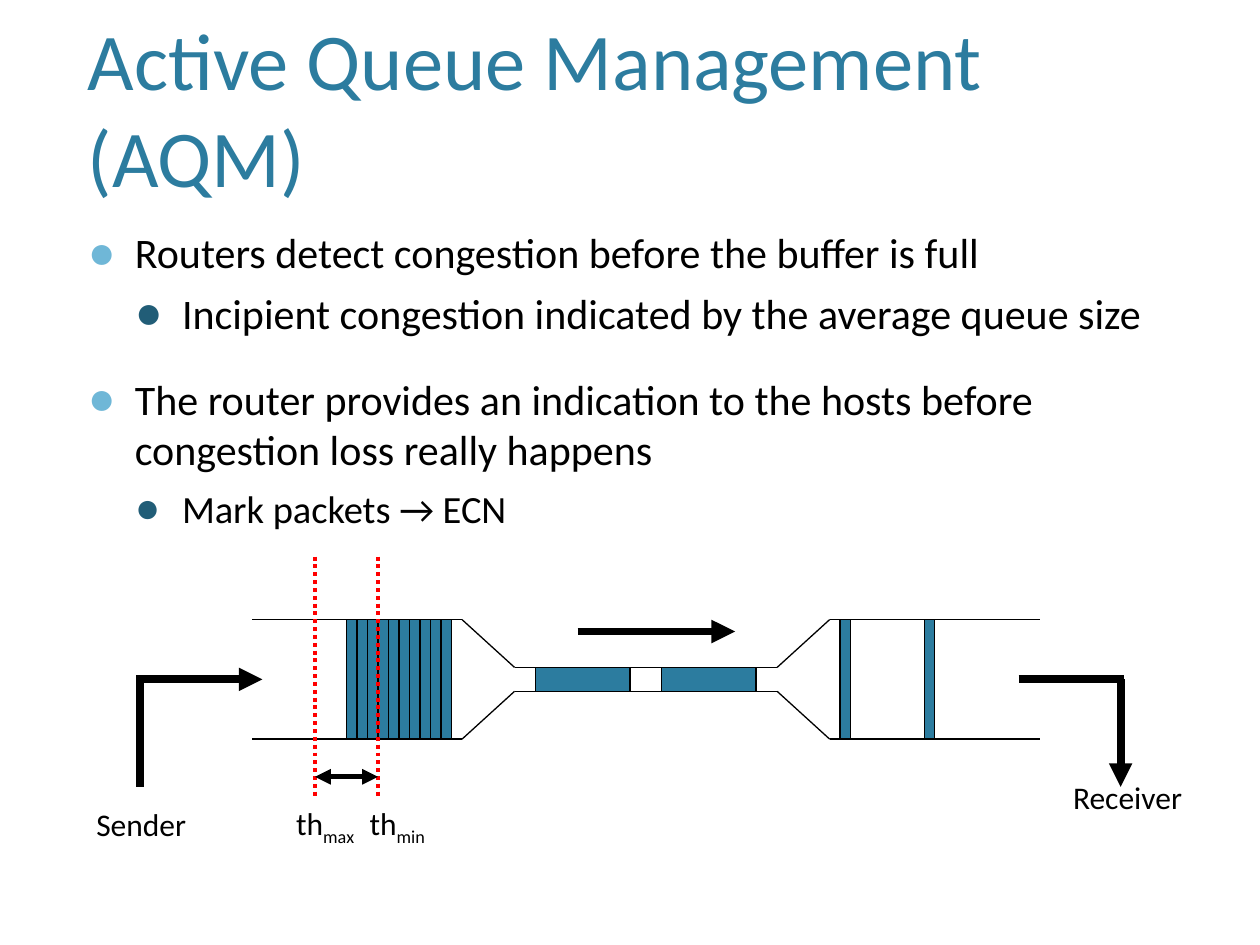
import pptx
import pptx.dml.color
import pptx.enum.dml
import pptx.enum.shapes
import pptx.enum.text
import pptx.oxml
import pptx.oxml.ns
import pptx.util
from pptx.util import Cm

RGBColor = pptx.dml.color.RGBColor
BLACK = RGBColor(0x00, 0x00, 0x00)
RED = RGBColor(0xFF, 0x00, 0x00)
TEAL = RGBColor(0x2C, 0x7C, 0x9F)
LIGHT_BLUE = RGBColor(0x6F, 0xB7, 0xD7)
DARK_BLUE = RGBColor(0x21, 0x5D, 0x77)

FONT = "Calibri"
DIAGRAM_COLUMNS = 75  # one column is the width of a queued packet


def append_element(parent, tag, **attributes):
    element = pptx.oxml.parse_xml(f"<a:{tag} {pptx.oxml.ns.nsdecls('a')}/>")
    for name, value in attributes.items():
        element.set(name, str(value))
    parent.append(element)


def add_text_box(slide, left, top, width, height,
                 anchor=pptx.enum.text.MSO_ANCHOR.TOP):
    frame = slide.shapes.add_textbox(
        Cm(left), Cm(top), Cm(width), Cm(height)).text_frame
    frame.word_wrap = True
    frame.vertical_anchor = anchor
    return frame


def add_text(paragraph, text, size=18, color=BLACK, baseline=None):
    run = paragraph.add_run()
    run.text = text
    run.font.name = FONT
    run.font.size = pptx.util.Pt(size)
    run.font.color.rgb = color
    if baseline is not None:
        run.font._element.set("baseline", str(baseline))


def set_bullet(paragraph, level, color):
    """Give the paragraph a coloured dot and the hanging indent of its level."""
    paragraph.level = level
    properties = paragraph._p.get_or_add_pPr()
    properties.set("marL", str(Cm(0.95 * (level + 1))))
    properties.set("indent", str(-Cm(0.95)))
    append_element(properties, "buClr")
    append_element(properties[-1], "srgbClr", val=color)
    append_element(properties, "buSzPct", val=110000)
    append_element(properties, "buFont", typeface="Arial")
    append_element(properties, "buChar", char="●")


def add_line(slide, start, end, width=0.75, color=BLACK, dash=None,
             head=False, tail=False):
    """Draw a line between two points; head and tail are arrowheads there."""
    line = slide.shapes.add_connector(
        pptx.enum.shapes.MSO_CONNECTOR.STRAIGHT,
        Cm(start[0]), Cm(start[1]), Cm(end[0]), Cm(end[1]))
    line.line.width = pptx.util.Pt(width)
    line.line.color.rgb = color
    if dash:
        line.line.dash_style = dash
    outline = line.line._get_or_add_ln()
    if head:
        append_element(outline, "headEnd", type="triangle")
    if tail:
        append_element(outline, "tailEnd", type="triangle")
    append_element(line._element.spPr, "effectLst")


def add_packet(slide, left, top, width, height):
    packet = slide.shapes.add_shape(
        pptx.enum.shapes.MSO_SHAPE.RECTANGLE,
        Cm(left), Cm(top), Cm(width), Cm(height))
    packet.shadow.inherit = False
    packet.fill.solid()
    packet.fill.fore_color.rgb = TEAL
    packet.line.color.rgb = BLACK
    packet.line.width = pptx.util.Pt(0.75)


def add_title(slide, left, top, width, height):
    frame = add_text_box(slide, left, top, width, height,
                         pptx.enum.text.MSO_ANCHOR.MIDDLE)
    add_text(frame.paragraphs[0], "Active Queue Management (AQM)",
             size=46, color=TEAL)


def add_bullets(slide, left, top, width, height):
    frame = add_text_box(slide, left, top, width, height)
    items = [
        (0, "Routers detect congestion before the buffer is full", 24),
        (1, "Incipient congestion indicated by the average queue size", 24),
        (0, "The router provides an indication to the hosts before "
            "congestion loss really happens", 24),
        (1, "Mark packets → ECN", 22),
    ]
    for index, (level, text, size) in enumerate(items):
        paragraph = frame.add_paragraph() if index else frame.paragraphs[0]
        if index:
            paragraph.space_before = pptx.util.Pt((20, 6)[level])
        set_bullet(paragraph, level, (LIGHT_BLUE, DARK_BLUE)[level])
        add_text(paragraph, text, size=size)


def add_network(slide, left, top, width, height):
    """Draw two buffers joined by a narrow link, with sender and receiver."""
    column = width / DIAGRAM_COLUMNS

    def point(columns, fraction):
        return left + columns * column, top + fraction * height

    upper_wall = [(0, 0), (20, 0), (25, 0.4), (50, 0.4), (55, 0), (75, 0)]
    lower_wall = [(x, 1 - y) for x, y in upper_wall]
    for wall in (upper_wall, lower_wall):
        for start, end in zip(wall, wall[1:]):
            add_line(slide, point(*start), point(*end))

    for position in [*range(9, 19), 56, 64]:
        add_packet(slide, *point(position, 0), column, height)
    for position in (27, 39):
        add_packet(slide, *point(position, 0.4), 9 * column, 0.2 * height)

    flow = [
        ((-11, 0.5), (1, 0.5), True),
        ((-10.7, 0.5), (-10.7, 1.4), False),
        ((31, 0.1), (46, 0.1), True),
        ((73, 0.5), (83, 0.5), False),
        ((82.7, 0.5), (82.7, 1.4), True),
    ]
    for start, end, arrow in flow:
        add_line(slide, point(*start), point(*end), width=4.5, tail=arrow)

    for label, position in (("Sender", (-16, 1.5)), ("Receiver", (77, 1.27))):
        frame = add_text_box(slide, *point(*position), 14 * column, 1)
        add_text(frame.paragraphs[0], label)


def add_thresholds(slide, left, top, width, height):
    """Mark the two queue thresholds at the left and right edge of the box."""
    bottom = top + height
    right = left + width
    for x in (right, left):
        add_line(slide, (x, top), (x, bottom), width=2.25, color=RED,
                 dash=pptx.enum.dml.MSO_LINE.ROUND_DOT)
    for name, x, label_width in (("min", right - 0.42, 2.1),
                                 ("max", left - 0.63, 1.9)):
        paragraph = add_text_box(slide, x, bottom, label_width, 1).paragraphs[0]
        add_text(paragraph, "th")
        add_text(paragraph, name, baseline=-25000)
    arrow_y = bottom - 0.42
    add_line(slide, (left, arrow_y), (right, arrow_y), width=3,
             head=True, tail=True)


def main():
    presentation = pptx.Presentation()
    presentation.slide_width = Cm(25.4)
    presentation.slide_height = Cm(19.05)
    slide = presentation.slides.add_slide(presentation.slide_layouts[6])
    add_title(slide, 1.52, 0.3, 22.35, 3.71)
    add_bullets(slide, 1.52, 4.45, 22.35, 12.06)
    add_network(slide, 5.08, 12.49, 15.88, 2.41)
    add_thresholds(slide, 6.35, 11.22, 1.27, 4.86)
    presentation.save("out.pptx")


if __name__ == "__main__":
    main()
